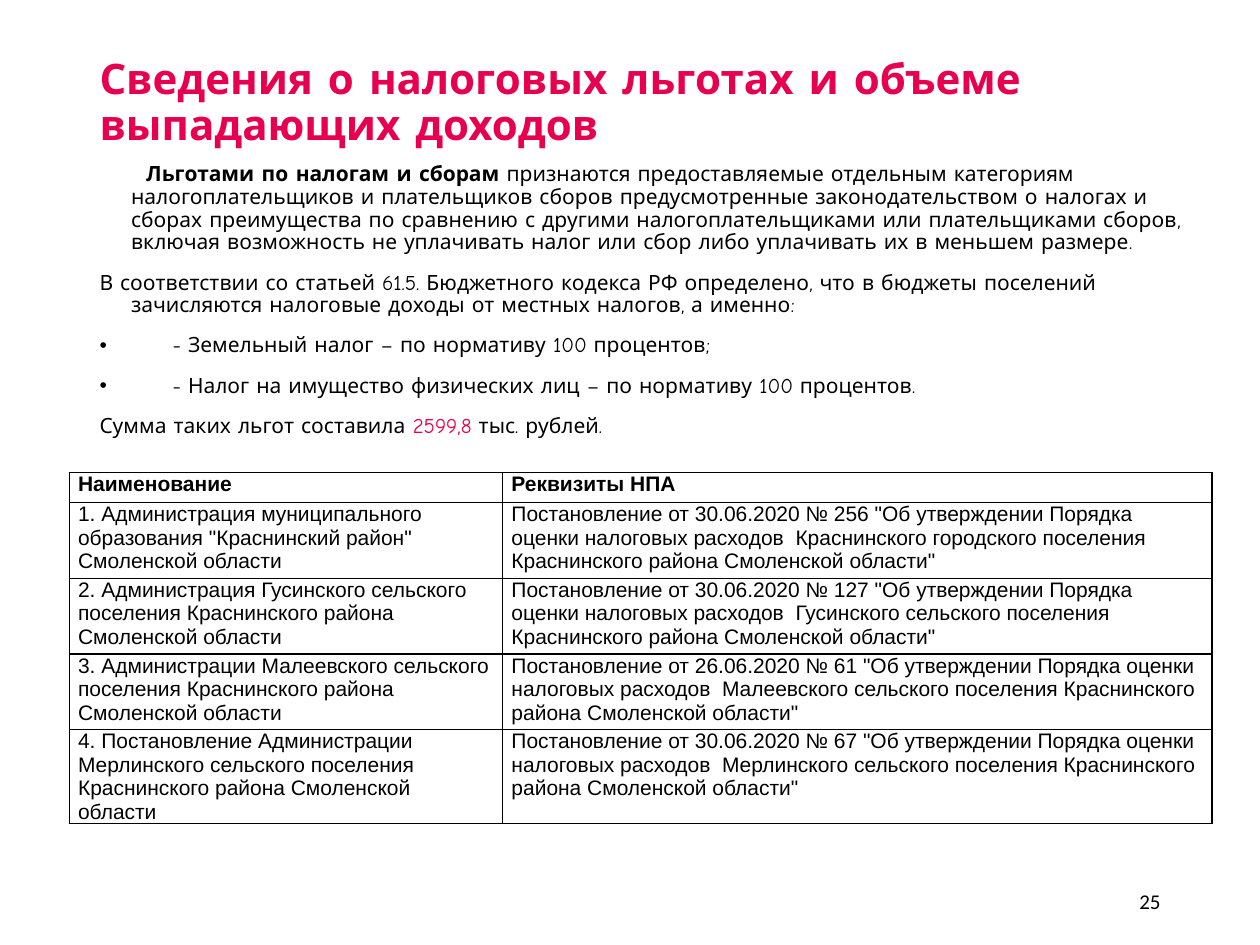
from pptx import Presentation
from pptx.dml.color import RGBColor
from pptx.enum.text import MSO_ANCHOR, MSO_AUTO_SIZE, PP_ALIGN
from pptx.oxml import parse_xml
from pptx.oxml.ns import nsdecls
from pptx.util import Inches, Pt

LEFT, RIGHT = PP_ALIGN.LEFT, PP_ALIGN.RIGHT
TOP, MIDDLE = MSO_ANCHOR.TOP, MSO_ANCHOR.MIDDLE
NO_FIT = MSO_AUTO_SIZE.NONE
ACCENT, BLACK = "E6004D", "000000"

TITLE = "Сведения о налоговых льготах и объеме выпадающих доходов"

# Each paragraph: left margin, first-line indent, bullet, runs of (text, changed format)
BODY = [
    (0.25, 0.12, None, [
        ("Льготами по налогам и сборам", {"bold": True}),
        (" признаются предоставляемые отдельным категориям налогоплательщиков и "
         "плательщиков сборов предусмотренные законодательством о налогах и сборах "
         "преимущества по сравнению с другими налогоплательщиками или плательщиками "
         "сборов, включая возможность не уплачивать налог или сбор либо уплачивать "
         "их в меньшем размере.", {})]),
    (0.25, -0.25, None, [
        ("В соответствии со статьей 61.5. Бюджетного кодекса РФ определено, что в "
         "бюджеты поселений зачисляются налоговые доходы от местных налогов, "
         "а именно:", {})]),
    (0.58, -0.58, "•", [("- Земельный налог – по нормативу 100 процентов;", {})]),
    (0.58, -0.58, "•", [
        ("- Налог на имущество физических лиц – по нормативу 100 процентов.", {})]),
    (0.25, -0.25, None, [
        ("Сумма таких льгот составила ", {}),
        ("2599,8", {"color": ACCENT}),
        (" тыс. рублей.", {})]),
]

COLUMNS = [3.44, 5.63]
ROWS = [
    ("Наименование", "Реквизиты НПА"),
    ('1. Администрация муниципального образования "Краснинский район" '
     "Смоленской области",
     'Постановление от 30.06.2020 № 256 "Об утверждении Порядка оценки налоговых '
     "расходов  Краснинского городского поселения Краснинского района "
     'Смоленской области"'),
    ("2. Администрация Гусинского сельского поселения Краснинского района "
     "Смоленской области",
     'Постановление от 30.06.2020 № 127 "Об утверждении Порядка оценки налоговых '
     "расходов  Гусинского сельского поселения Краснинского района "
     'Смоленской области"'),
    ("3. Администрации Малеевского сельского поселения Краснинского района "
     "Смоленской области",
     'Постановление от 26.06.2020 № 61 "Об утверждении Порядка оценки налоговых '
     "расходов  Малеевского сельского поселения Краснинского района "
     'Смоленской области"'),
    ("4. Постановление Администрации Мерлинского сельского поселения "
     "Краснинского района Смоленской области",
     'Постановление от 30.06.2020 № 67 "Об утверждении Порядка оценки налоговых '
     "расходов  Мерлинского сельского поселения Краснинского района "
     'Смоленской области"'),
]


def rgb(value):
    return RGBColor.from_string(value)


def add_run(p, text, name, size=12, color=BLACK, bold=False):
    r = p.add_run()
    r.text = text
    for key, value in {"name": name, "size": Pt(size), "bold": bold}.items():
        setattr(r.font, key, value)
    r.font.color.rgb = rgb(color)


def place(sp, box, anchor):
    """Move a text shape to its box and return its text frame."""
    for key, value in zip(("left", "top", "width", "height"), box):
        setattr(sp, key, Inches(value))
    tf = sp.text_frame
    for key, value in {"word_wrap": True, "auto_size": NO_FIT,
                       "vertical_anchor": anchor}.items():
        setattr(tf, key, value)
    return tf


def set_bullet(p, margin, indent, char):
    pPr = p._p.get_or_add_pPr()
    pPr.set("marL", str(Inches(margin)))
    pPr.set("indent", str(Inches(indent)))
    if char:
        tags = ['<a:buFont %s typeface="Arial"/>', '<a:buChar %s char="' + char + '"/>']
    else:
        tags = ["<a:buNone %s/>"]
    for tag in tags:
        pPr.append(parse_xml(tag % nsdecls("a")))


def add_title(sp, box):
    p = place(sp, box, MIDDLE).paragraphs[0]
    p.alignment, p.line_spacing = LEFT, 0.9
    add_run(p, TITLE, "Comic Neue", 24, ACCENT, True)


def add_body(sp, box):
    tf = place(sp, box, TOP)
    for i, (margin, indent, char, runs) in enumerate(BODY):
        p = tf.add_paragraph() if i else tf.paragraphs[0]
        set_bullet(p, margin, indent, char)
        p.alignment, p.line_spacing = LEFT, 0.9
        p.space_before = Pt(10 if i else 0)
        for text, changes in runs:
            add_run(p, text, "Comic Neue", **changes)


def add_borders(cell):
    tcPr = cell._tc.get_or_add_tcPr()
    for side in "LRTB":
        tcPr.append(parse_xml(
            f'<a:ln{side} {nsdecls("a")} w="{Pt(1)}"><a:solidFill>'
            f'<a:srgbClr val="{BLACK}"/></a:solidFill></a:ln{side}>'))


def add_acts_table(s, box):
    x, y, w, h = map(Inches, box)
    table = s.shapes.add_table(len(ROWS), len(COLUMNS), x, y, w, h).table
    table.horz_banding = False
    for column, width in zip(table.columns, COLUMNS):
        column.width = Inches(width)
    for i, texts in enumerate(ROWS):
        table.rows[i].height = Inches(0.6 if i else 0.24)
        for j, text in enumerate(texts):
            cell = table.cell(i, j)
            for key, value in {"margin_left": 0.07, "margin_right": 0.07,
                               "margin_top": 0, "margin_bottom": 0}.items():
                setattr(cell, key, Inches(value))
            add_borders(cell)
            cell.fill.background()
            add_run(cell.text_frame.paragraphs[0], text, "Arial", bold=i == 0)


def add_page_number(s, box):
    sp = s.shapes.add_textbox(*map(Inches, box))
    p = place(sp, box, MIDDLE).paragraphs[0]
    p.alignment = RIGHT
    add_run(p, "25", "Calibri")


def main():
    prs = Presentation()
    prs.slide_width, prs.slide_height = Inches(10), Inches(7.5)
    s = prs.slides.add_slide(prs.slide_layouts[1])
    add_title(s.shapes.title, (0.69, 0.4, 8.62, 0.85))
    add_body(s.placeholders[1], (0.69, 1.25, 8.92, 5.16))
    add_page_number(s, (7.06, 6.95, 2.25, 0.4))
    add_acts_table(s, (0.55, 3.75, sum(COLUMNS), 2.64))
    prs.save("out.pptx")


if __name__ == "__main__":
    main()
